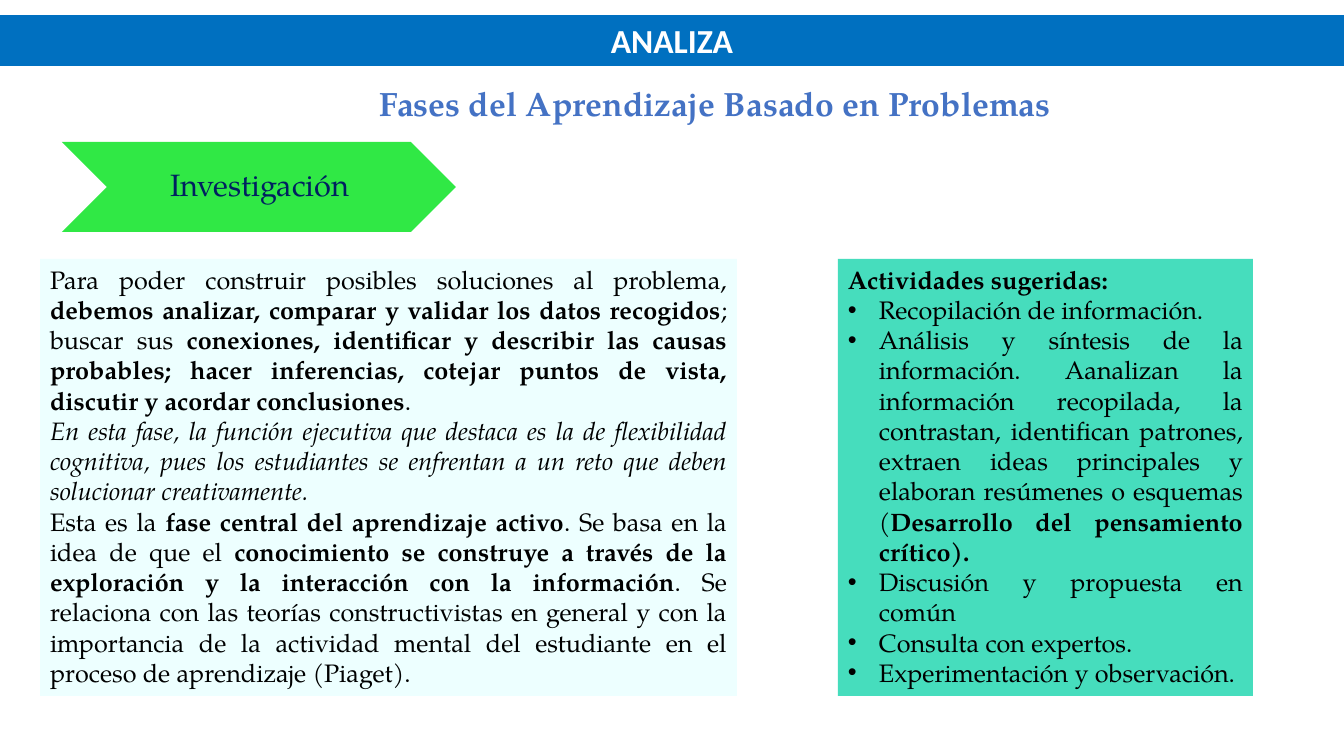
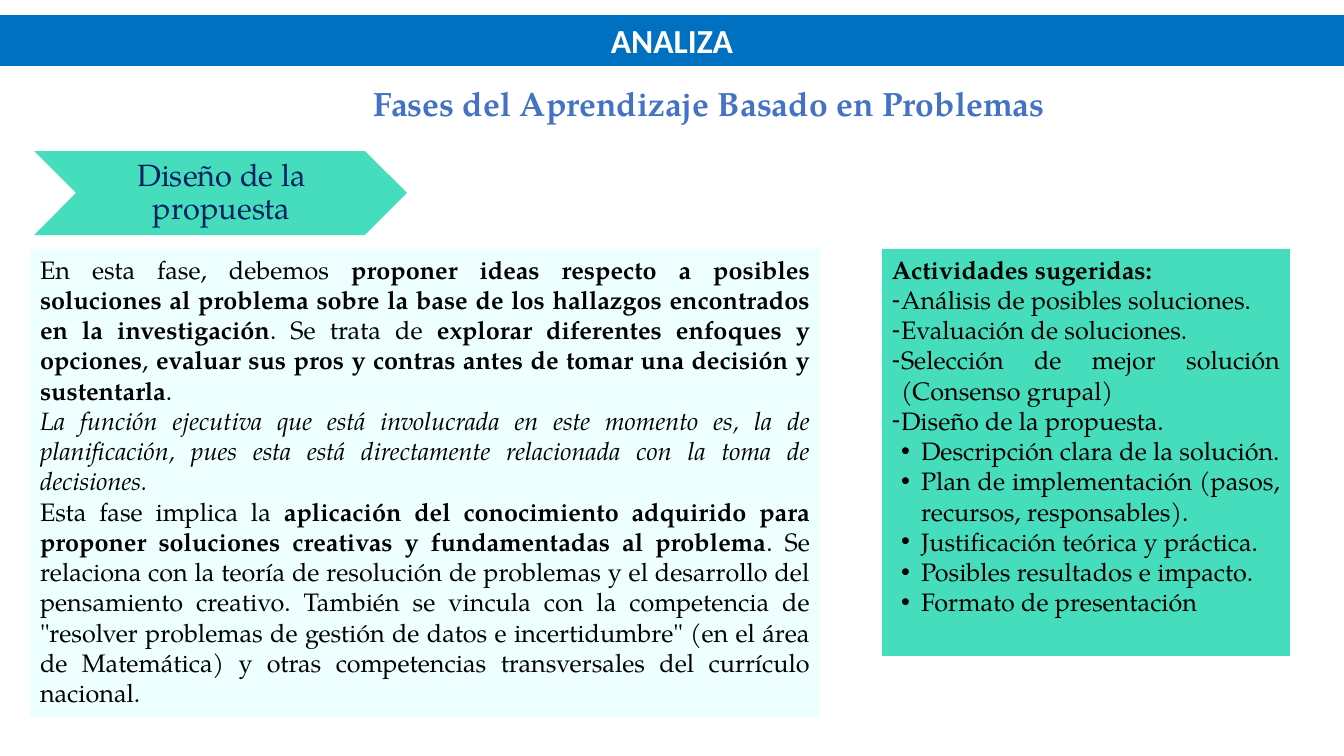
from lxml import etree
from pptx import Presentation
from pptx.dml.color import RGBColor
from pptx.enum.shapes import MSO_SHAPE as Preset
from pptx.enum.text import MSO_ANCHOR as Anchor, PP_ALIGN as Align
from pptx.oxml.ns import qn
from pptx.util import Emu, Pt

# Shared look
EMU_PER_PX = 914400 / 100.8
SERIF, SANS = "TeX Gyre Pagella", "Calibri"
COLORS = {
    "band": "0070C0",
    "band_text": "FFFFFF",
    "title": "4472C4",
    "phase_text": "002060",
    "text": "000000",
    "explanation": "EDFFFF",
    "green": "30E845",
    "mint": "46DDBD",
}
BAND = (0, 15, 1344, 51)
HEADING = "Actividades sugeridas:"
PLAIN, BOLD, ITALIC = "plain", "bold", "italic"

# Bullet levels: character, left indent and hanging width
BULLETS = {
    "dot": ("•", 31, 31),
    "dash": ("-", 9, 9),
    "subdot": ("•", 29, 20),
}

# Content of the slides
SLIDES = [
    {
        "title_box": (275, 78, 880, 50),
        "phase": "Investigación",
        "phase_box": (62, 142, 394, 90),
        "phase_color": "green",
        "explanation_box": (40, 259, 697, 437),
        "explanation": [
            [("Para poder construir posibles soluciones al problema, ", PLAIN),
             ("debemos analizar, comparar y validar los datos recogidos", BOLD),
             ("; buscar sus ", PLAIN),
             ("conexiones, identificar y describir las causas probables; hacer inferencias, "
              "cotejar puntos de vista, discutir y acordar conclusiones", BOLD),
             (".", PLAIN)],
            [("En esta fase, la función ejecutiva que destaca es la de flexibilidad cognitiva, "
              "pues los estudiantes se enfrentan a un reto que deben solucionar creativamente.",
              ITALIC)],
            [("Esta es la ", PLAIN),
             ("fase central del aprendizaje activo", BOLD),
             (". Se basa en la idea de que el ", PLAIN),
             ("conocimiento se construye a través de la exploración y la interacción con la "
              "información", BOLD),
             (". Se relaciona con las teorías constructivistas en general y con la importancia "
              "de la actividad mental del estudiante en el proceso de aprendizaje (Piaget).",
              PLAIN)],
        ],
        "activities_box": (838, 259, 415, 437),
        "activities": [
            ("dot", [("Recopilación de información.", PLAIN)]),
            ("dot", [("Análisis y síntesis de la información. Aanalizan la información "
                      "recopilada, la contrastan, identifican patrones, extraen ideas "
                      "principales y elaboran resúmenes o esquemas (", PLAIN),
                     ("Desarrollo del pensamiento crítico).", BOLD)]),
            ("dot", [("Discusión y propuesta en común", PLAIN)]),
            ("dot", [("Consulta con expertos.", PLAIN)]),
            ("dot", [("Experimentación y observación.", PLAIN)]),
        ],
    },
    {
        "title_box": (306, 78, 806, 50),
        "phase": "Diseño de la propuesta",
        "phase_box": (34, 151, 373, 84),
        "phase_color": "mint",
        "explanation_box": (30, 249, 790, 468),
        "explanation": [
            [("En esta fase, debemos ", PLAIN),
             ("proponer ideas respecto a posibles soluciones al problema sobre la base de los "
              "hallazgos encontrados en la investigación", BOLD),
             (". Se trata de ", PLAIN),
             ("explorar diferentes enfoques y opciones", BOLD),
             (", ", PLAIN),
             ("evaluar sus pros y contras antes de tomar una decisión y sustentarla", BOLD),
             (".", PLAIN)],
            [("La función ejecutiva que está involucrada en este momento es, la de "
              "planificación, pues esta está directamente relacionada con la toma de "
              "decisiones.", ITALIC)],
            [("Esta fase implica la ", PLAIN),
             ("aplicación del conocimiento adquirido para proponer soluciones creativas y "
              "fundamentadas al problema", BOLD),
             (". Se relaciona con la teoría de resolución de problemas y el desarrollo del "
              "pensamiento creativo. También se vincula con la competencia de \"resolver "
              "problemas de gestión de datos e incertidumbre\" (en el área de Matemática) y "
              "otras competencias transversales del currículo nacional.", PLAIN)],
        ],
        "activities_box": (882, 249, 408, 407),
        "activities": [
            ("dash", [("Análisis de posibles soluciones.", PLAIN)]),
            ("dash", [("Evaluación de soluciones.", PLAIN)]),
            ("dash", [("Selección de mejor solución (Consenso grupal)", PLAIN)]),
            ("dash", [("Diseño de la propuesta.", PLAIN)]),
            ("subdot", [("Descripción clara de la solución.", PLAIN)]),
            ("subdot", [("Plan de implementación (pasos, recursos, responsables).", PLAIN)]),
            ("subdot", [("Justificación teórica y práctica.", PLAIN)]),
            ("subdot", [("Posibles resultados e impacto.", PLAIN)]),
            ("subdot", [("Formato de presentación", PLAIN)]),
        ],
    },
]


def px(length):
    return Emu(round(length * EMU_PER_PX))


def add_block(slide, box, paragraphs, size, color, fill=None, preset=Preset.RECTANGLE,
              font=SERIF, align=Align.CENTER, anchor=Anchor.TOP):
    """Add a shape whose paragraphs are (bullet level, runs) pairs."""
    shape = slide.shapes.add_shape(preset, *map(px, box))
    shape.shadow.inherit = False
    shape.line.fill.background()
    if fill:
        shape.fill.solid()
        shape.fill.fore_color.rgb = RGBColor.from_string(COLORS[fill])
    else:
        shape.fill.background()
    frame = shape.text_frame
    frame.word_wrap = True
    frame.vertical_anchor = anchor
    frame.margin_left = frame.margin_right = px(10)
    frame.margin_top = frame.margin_bottom = px(5)
    for index, (level, runs) in enumerate(paragraphs):
        paragraph = frame.add_paragraph() if index else frame.paragraphs[0]
        paragraph.alignment = align
        if level:
            character, indent, hanging = BULLETS[level]
            properties = paragraph._p.get_or_add_pPr()
            properties.set("marL", str(px(indent)))
            properties.set("indent", str(-px(hanging)))
            etree.SubElement(properties, qn("a:buFont")).set("typeface", "Arial")
            etree.SubElement(properties, qn("a:buChar")).set("char", character)
        for text, style in runs:
            run = paragraph.add_run()
            run.text = text
            run.font.name = font
            run.font.size = Pt(size)
            run.font.bold = style == BOLD
            run.font.italic = style == ITALIC
            run.font.color.rgb = RGBColor.from_string(COLORS[color])
    return shape


presentation = Presentation()
presentation.slide_width = px(1344)
presentation.slide_height = px(756)

for content in SLIDES:
    slide = presentation.slides.add_slide(presentation.slide_layouts[6])

    # Band and title
    add_block(slide, BAND, [(None, [("ANALIZA", BOLD)])], 24, "band_text", "band", font=SANS)
    title = [(None, [("Fases del Aprendizaje Basado en Problemas", BOLD)])]
    add_block(slide, content["title_box"], title, 24, "title")

    # Phase arrow
    phase = add_block(slide, content["phase_box"], [(None, [(content["phase"], PLAIN)])], 22,
                      "phase_text", content["phase_color"], Preset.CHEVRON,
                      anchor=Anchor.MIDDLE)
    phase.text_frame.margin_left = px(50)
    phase.text_frame.margin_right = px(48)
    phase.text_frame.margin_top = phase.text_frame.margin_bottom = px(2)
    phase.text_frame.paragraphs[0].line_spacing = 0.9

    # Explanation and suggested activities
    explanation = [(None, runs) for runs in content["explanation"]]
    activities = [(None, [(HEADING, BOLD)])] + content["activities"]
    add_block(slide, content["explanation_box"], explanation, 18, "text", "explanation",
              align=Align.JUSTIFY)
    add_block(slide, content["activities_box"], activities, 18, "text", "mint",
              align=Align.JUSTIFY)

presentation.save("out.pptx")
